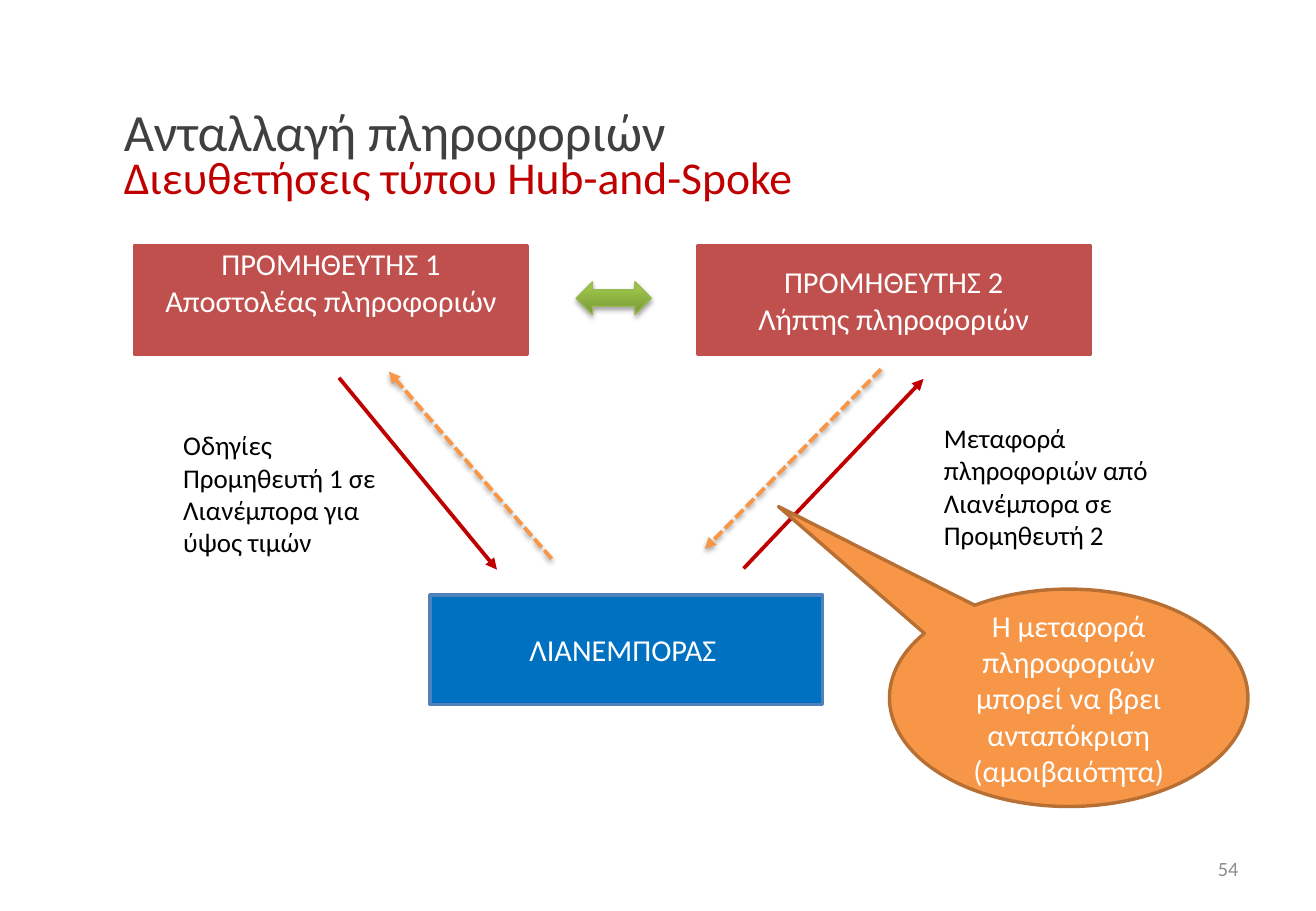
from pptx import Presentation
from pptx.util import Inches, Pt
from pptx.dml.color import RGBColor
from pptx.enum.dml import MSO_LINE as Dash
from pptx.enum.shapes import MSO_SHAPE as Geo, MSO_CONNECTOR as Link
from pptx.enum.text import PP_ALIGN as Align, MSO_ANCHOR as Anchor
from pptx.oxml import parse_xml
from pptx.oxml.ns import nsdecls

WHITE = RGBColor(0xFF, 0xFF, 0xFF)
BLACK = RGBColor(0, 0, 0)
DARK = RGBColor(0x40, 0x40, 0x40)
GRAY = RGBColor(0x8C, 0x8C, 0x8C)
RED = RGBColor(0xC0, 0, 0)
BRICK = RGBColor(0xC0, 0x50, 0x4D)
BLUE = RGBColor(0, 0x70, 0xC0)
EDGE = RGBColor(0x4F, 0x81, 0xBD)
ORANGE = RGBColor(0xF7, 0x96, 0x46)
BROWN = RGBColor(0xB7, 0x6F, 0x34)
MOSS = RGBColor(0x77, 0x97, 0x37)
LIME = RGBColor(0x9B, 0xC3, 0x48)
GREEN = RGBColor(0x98, 0xB9, 0x55)

SHADOW = ('<a:effectLst %s><a:outerShdw blurRad="39400" dist="20300" dir="5400000" '
          'rotWithShape="0"><a:srgbClr val="000000"><a:alpha val="36000"/></a:srgbClr>'
          '</a:outerShdw></a:effectLst>' % nsdecls("a"))
PLAIN = '<a:effectLst %s/>' % nsdecls("a")
HEAD = '<a:tailEnd %s type="triangle"/>' % nsdecls("a")

prs = Presentation()
prs.slide_width, prs.slide_height = Inches(10.83), Inches(7.5)
slide = prs.slides.add_slide(prs.slide_layouts[6])
shapes = slide.shapes


def write(shape, text, size, color, align=Align.LEFT, anchor=Anchor.MIDDLE):
    frame = shape.text_frame
    frame.word_wrap = True
    frame.vertical_anchor = anchor
    frame.text = text
    for para in frame.paragraphs:
        para.alignment = align
        for run in para.runs:
            run.font.name = "Calibri"
            run.font.size = Pt(size)
            run.font.color.rgb = color


def block(geo, box, fill, edge, text, anchor=Anchor.MIDDLE):
    shape = shapes.add_shape(geo, *map(Inches, box))
    shape.shadow.inherit = False
    shape.fill.solid()
    shape.fill.fore_color.rgb = fill
    shape.line.color.rgb = edge
    shape.line.width = Pt(2)
    write(shape, text, 18, WHITE, Align.CENTER, anchor)
    return shape


# Title with red second line
title = shapes.add_textbox(Inches(0.92), Inches(0.85), Inches(9.58), Inches(0.96))
write(title, "Ανταλλαγή πληροφοριών\vΔιευθετήσεις τύπου Hub-and-Spoke", 31, DARK)
head = title.text_frame.paragraphs[0]
head.line_spacing = Pt(25)
head.runs[1].font.size = Pt(27)
head.runs[1].font.color.rgb = RED

# Suppliers and retailer
first = block(Geo.RECTANGLE, (1.11, 2.02, 3.23, 0.9), BRICK, BRICK,
              "ΠΡΟΜΗΘΕΥΤΗΣ 1\nΑποστολέας πληροφοριών", Anchor.TOP)
first.text_frame.margin_top = 0
block(Geo.RECTANGLE, (5.74, 2.02, 3.23, 0.9), BRICK, BRICK,
      "ΠΡΟΜΗΘΕΥΤΗΣ 2\nΛήπτης πληροφοριών")
block(Geo.RECTANGLE, (3.54, 4.9, 3.23, 0.9), BLUE, EDGE, "ΛΙΑΝΕΜΠΟΡΑΣ ")

# Arrows: solid red one way, dashed orange the other
for ends, color, dashed in [
    ((7.25, 3.04, 5.8, 4.52), ORANGE, True),
    ((2.79, 3.11, 4.09, 4.69), RED, False),
    ((6.12, 4.68, 7.6, 3.12), RED, False),
    ((4.54, 4.6, 3.2, 3.06), ORANGE, True),
]:
    arrow = shapes.add_connector(Link.STRAIGHT, *map(Inches, ends))
    arrow.line.color.rgb = color
    arrow.line.width = Pt(2.25)
    if dashed:
        arrow.line.dash_style = Dash.SQUARE_DOT
    arrow.line._get_or_add_ln().append(parse_xml(HEAD))
    arrow._element.spPr.append(parse_xml(SHADOW if dashed else PLAIN))

# Green two-way arrow between suppliers
swap = shapes.add_shape(Geo.LEFT_RIGHT_ARROW, Inches(4.74), Inches(2.32),
                        Inches(0.62), Inches(0.27))
swap.fill.gradient()
swap.fill.gradient_angle = 90
for stop, color, place in zip(swap.fill.gradient_stops, (MOSS, LIME), (0, 0.8)):
    stop.color.rgb = color
    stop.position = place
swap.line.color.rgb = GREEN
swap.line.width = Pt(0.75)
swap._element.spPr.append(parse_xml(SHADOW))

# Side notes
for box, text in [
    ((1.41, 3.48, 1.94, 1.18), "Οδηγίες Προμηθευτή 1 σε Λιανέμπορα για ύψος τιμών"),
    ((7.67, 3.42, 2.15, 1.18), "Μεταφορά πληροφοριών από Λιανέμπορα σε Προμηθευτή 2"),
]:
    note = shapes.add_textbox(*map(Inches, box))
    write(note, text, 16, BLACK, anchor=Anchor.TOP)

# Callout
bubble = block(Geo.OVAL_CALLOUT, (7.32, 4.85, 2.95, 1.79), ORANGE, BROWN,
               "Η μεταφορά πληροφοριών μπορεί να βρει ανταπόκριση (αμοιβαιότητα)")
bubble.adjustments[0] = -0.81
bubble.adjustments[1] = -0.88

# Page number
page = shapes.add_textbox(Inches(7.76), Inches(6.95), Inches(2.53), Inches(0.4))
write(page, "54", 12, GRAY, Align.RIGHT)

prs.save("out.pptx")
